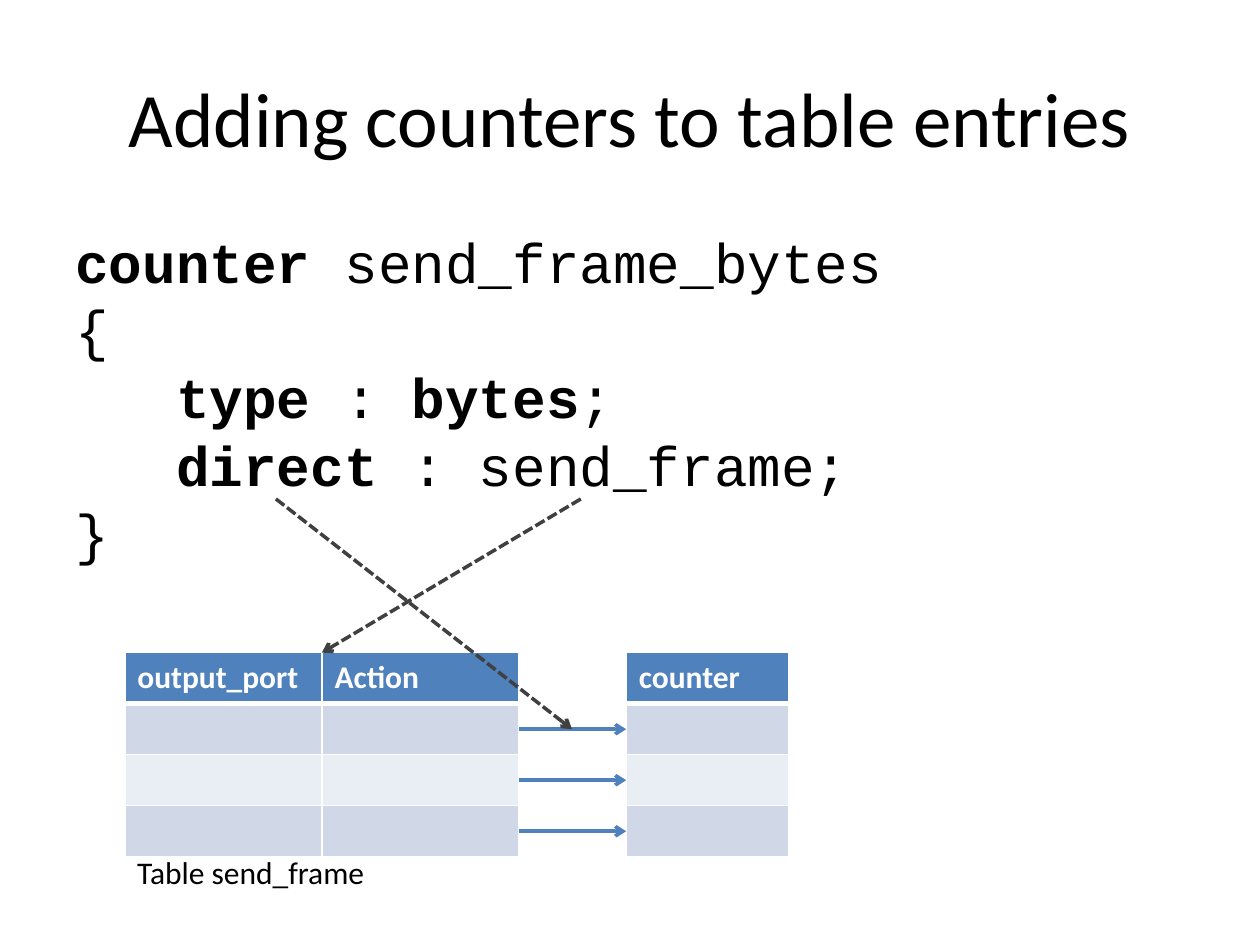
"""Build a slide that shows how counters attach to table entries."""
from lxml import etree
from pptx import Presentation
from pptx.dml.color import RGBColor
from pptx.enum import dml, shapes, text
from pptx.oxml import ns
from pptx import util as u

COLORS = {"ink": "000000", "white": "FFFFFF", "blue": "4F81BD",
          "dark_band": "D0D8E8", "light_band": "E9EDF4", "gray": "404040"}
BODY_FONT, CODE_FONT = "Calibri", "Courier New"
TABLE_TOP, ROW_HEIGHT, ROW_COUNT = 5.18, 0.405, 4
MATCH_LEFT, MATCH_COLUMN = 0.99, 1.565
COUNTER_LEFT, COUNTER_COLUMN = 4.97, 1.29
MATCH_RIGHT = MATCH_LEFT + 2 * MATCH_COLUMN
CODE = [
    (0, [("counter ", True), ("send_frame_bytes", False)]),
    (0, [("{", False)]),
    (0.8, [("type ", True), (": ", False), ("bytes", True), (";", False)]),
    (0.8, [("direct", True), (" : send_frame;", False)]),
    (0, [("}", False)]),
]


def color(name):
    return RGBColor.from_string(COLORS[name])


def row_center(row):
    return TABLE_TOP + ROW_HEIGHT * (row + 0.5)


class SlideBuilder:
    def __init__(self, deck):
        self.page = deck.slides.add_slide(deck.slide_layouts[5])

    def span(self, para, words, size=18, font=BODY_FONT, ink="ink", bold=False):
        span = para.add_run()
        span.text = words
        span.font.size = u.Pt(size)
        span.font.name = font
        span.font.bold = bold
        span.font.color.rgb = color(ink)

    def title(self, words):
        box = self.page.shapes.title
        box.left, box.top = u.Inches(0.5), u.Inches(0.3)
        box.width, box.height = u.Inches(9), u.Inches(1.25)
        box.text_frame.vertical_anchor = text.MSO_ANCHOR.MIDDLE
        para = box.text_frame.paragraphs[0]
        para.alignment = text.PP_ALIGN.CENTER
        self.span(para, words, size=44)

    def text_box(self, left, top, width, height, wrap=True):
        box = self.page.shapes.add_textbox(
            u.Inches(left), u.Inches(top), u.Inches(width), u.Inches(height))
        box.text_frame.word_wrap = wrap
        return box.text_frame

    def code(self, lines):
        frame = self.text_box(0.5, 1.75, 9, 4.95)
        for number, (indent, spans) in enumerate(lines):
            para = frame.add_paragraph() if number else frame.paragraphs[0]
            para.line_spacing = u.Pt(38.7)
            para.space_before = u.Pt(0 if number else 5)
            para._p.get_or_add_pPr().set("marL", str(u.Inches(indent)))
            for words, bold in spans:
                self.span(para, words, 32, CODE_FONT, bold=bold)

    def caption(self, words):
        frame = self.text_box(MATCH_LEFT, 6.72, 2.05, 0.4, wrap=False)
        frame.auto_size = text.MSO_AUTO_SIZE.SHAPE_TO_FIT_TEXT
        self.span(frame.paragraphs[0], words)

    def borders(self, cell, bottom, top):
        props = cell._tc.get_or_add_tcPr()
        for side, points in (("L", 1), ("R", 1), ("T", top), ("B", bottom)):
            line = etree.SubElement(props, ns.qn(f"a:ln{side}"), w=str(u.Pt(points)))
            fill = etree.SubElement(line, ns.qn("a:solidFill"))
            etree.SubElement(fill, ns.qn("a:srgbClr"), val=COLORS["white"])

    def table(self, left, column_width, headings):
        table = self.page.shapes.add_table(
            ROW_COUNT, len(headings), u.Inches(left), u.Inches(TABLE_TOP),
            u.Inches(column_width * len(headings)),
            u.Inches(ROW_HEIGHT * ROW_COUNT)).table
        for column in table.columns:
            column.width = u.Inches(column_width)
        bands = ["blue", "dark_band", "light_band", "dark_band"]
        for number, band in enumerate(bands):
            table.rows[number].height = u.Inches(ROW_HEIGHT)
            for cell in table.rows[number].cells:
                self.borders(cell, bottom=3 if number == 0 else 1,
                             top=3 if number == 1 else 1)
                cell.fill.solid()
                cell.fill.fore_color.rgb = color(band)
        for cell, words in zip(table.rows[0].cells, headings):
            self.span(cell.text_frame.paragraphs[0], words, ink="white", bold=True)

    def arrow(self, start, end, ink="blue", dashed=False):
        arrow = self.page.shapes.add_connector(
            shapes.MSO_CONNECTOR.STRAIGHT, *map(u.Inches, (*start, *end)))
        arrow.line.width = u.Pt(2)
        arrow.line.color.rgb = color(ink)
        if dashed:
            arrow.line.dash_style = dml.MSO_LINE.SQUARE_DOT
        etree.SubElement(arrow.line._get_or_add_ln(), ns.qn("a:tailEnd"), type="arrow")
        etree.SubElement(arrow._element.spPr, ns.qn("a:effectLst"))


def main():
    deck = Presentation()
    deck.slide_width, deck.slide_height = u.Inches(10), u.Inches(7.5)
    slide = SlideBuilder(deck)
    slide.title("Adding counters to table entries")
    slide.code(CODE)
    slide.table(MATCH_LEFT, MATCH_COLUMN, ["output_port", "Action"])
    slide.table(COUNTER_LEFT, COUNTER_COLUMN, ["counter"])
    slide.arrow((4.61, 3.96), (MATCH_LEFT + MATCH_COLUMN, TABLE_TOP), "gray", True)
    for row in range(1, ROW_COUNT):
        slide.arrow((MATCH_RIGHT, row_center(row)), (COUNTER_LEFT, row_center(row)))
    slide.arrow((2.19, 3.96), (4.54, row_center(1)), "gray", True)
    slide.caption("Table send_frame")
    deck.save("out.pptx")


if __name__ == "__main__":
    main()
